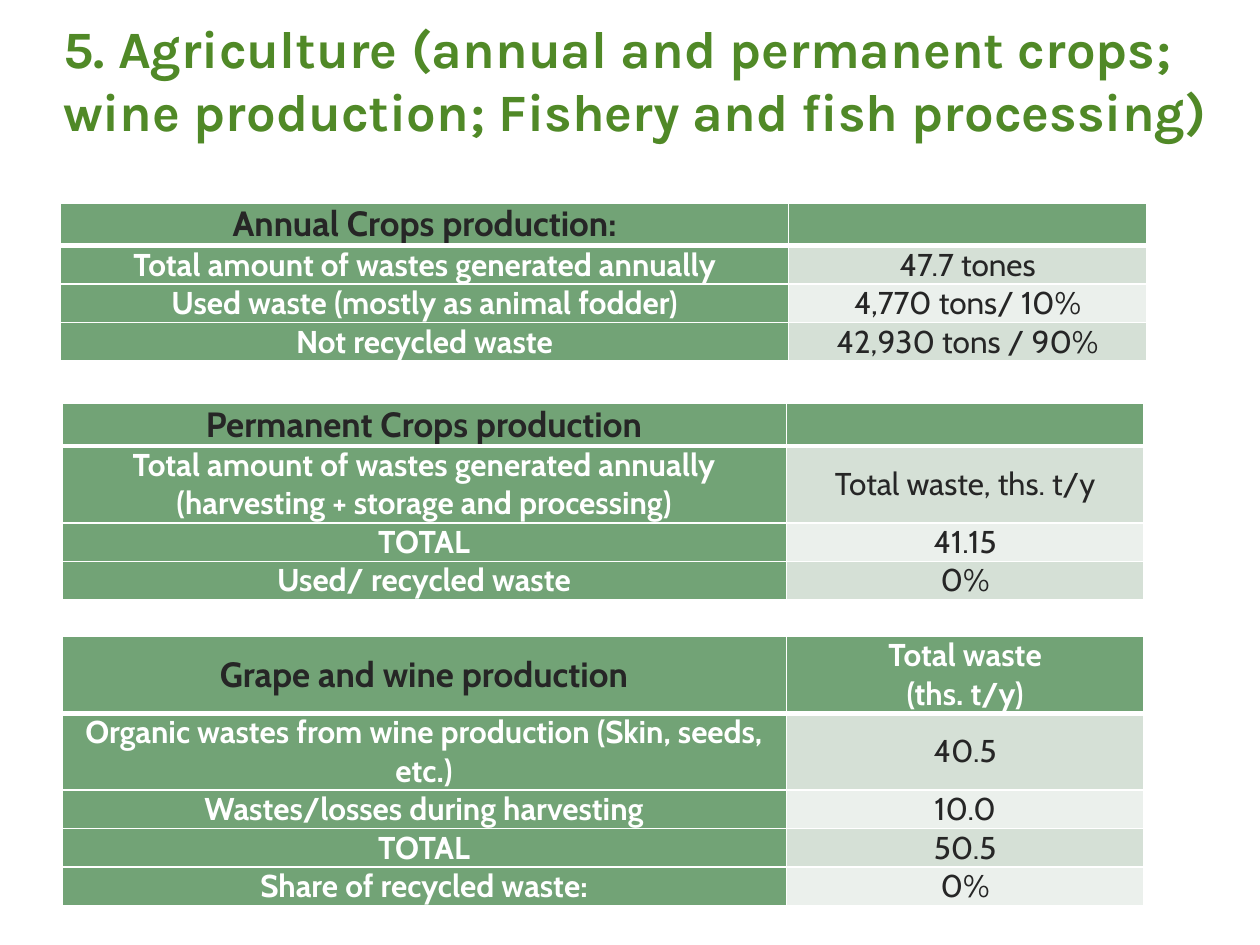
from dataclasses import dataclass

from lxml.etree import SubElement
from pptx import Presentation
from pptx.dml.color import RGBColor as RGB
from pptx.enum.text import MSO_ANCHOR as ANCHOR, MSO_AUTO_SIZE as AUTO, PP_ALIGN as ALIGN
from pptx.oxml.ns import qn
from pptx.util import Inches, Pt


@dataclass(frozen=True)
class Theme:
    title_font: str = "Karla"
    body_font: str = "Cabin"
    title_size: int = 30
    heading_size: int = 20
    body_size: int = 18
    title_color: str = "508927"
    dark: str = "262626"
    light: str = "FFFFFF"
    label_fill: str = "72A376"
    value_fills: tuple = ("D5E0D6", "EBF0EC")
    value_width: float = 2.84
    heading_height: float = 0.33
    line_height: float = 0.3


class SlideBuilder:
    def __init__(self, slide, theme):
        self.slide = slide
        self.theme = theme

    def style(self, paragraph, font_name, size, color, bold, align):
        paragraph.alignment = align
        font = paragraph.font
        font.name, font.size, font.bold = font_name, Pt(size), bold
        font.color.rgb = RGB.from_string(color)

    def title(self, wording):
        theme = self.theme
        title = self.slide.shapes.title
        title.left, title.top = Inches(0), Inches(0)
        title.width, title.height = Inches(10), Inches(0.92)
        frame = title.text_frame
        frame.word_wrap, frame.auto_size = True, AUTO.NONE
        frame.vertical_anchor = ANCHOR.TOP
        frame.margin_left, frame.margin_right = Inches(0.5), Inches(0.1)
        frame.margin_top, frame.margin_bottom = Inches(0.13), Inches(0.05)
        frame.text = wording
        self.style(frame.paragraphs[0], theme.title_font, theme.title_size,
                   theme.title_color, True, ALIGN.LEFT)

    def borders(self, cell, bottom):
        properties = cell._tc.get_or_add_tcPr()
        sides = (("a:lnL", 1), ("a:lnR", 1), ("a:lnT", 1), ("a:lnB", bottom))
        for position, (side, width) in enumerate(sides):
            line = SubElement(properties, qn(side), w=str(Pt(width)))
            fill = SubElement(line, qn("a:solidFill"))
            SubElement(fill, qn("a:srgbClr"), val=self.theme.light)
            # Border lines come before the cell fill
            properties.insert(position, line)

    def cell(self, cell, wording, fill, size, color, bold, bottom):
        cell.margin_left = cell.margin_right = Inches(0.07)
        cell.margin_top = cell.margin_bottom = 0
        cell.vertical_anchor = ANCHOR.MIDDLE
        cell.fill.solid()
        cell.fill.fore_color.rgb = RGB.from_string(fill)
        self.borders(cell, bottom)
        cell.text_frame.text = wording
        for paragraph in cell.text_frame.paragraphs:
            self.style(paragraph, self.theme.body_font, size, color, bold, ALIGN.CENTER)

    def waste_table(self, left, top, label_width, rows):
        """Each row holds a label, a value and its number of text lines."""
        theme = self.theme
        heights = [theme.line_height * lines for _, _, lines in rows]
        heights[0] = max(heights[0], theme.heading_height)
        table = self.slide.shapes.add_table(
            len(rows), 2, Inches(left), Inches(top),
            Inches(label_width + theme.value_width), Inches(sum(heights))).table
        table.first_row = table.horz_banding = False
        table.columns[0].width = Inches(label_width)
        table.columns[1].width = Inches(theme.value_width)

        for index, (label, value, _) in enumerate(rows):
            table.rows[index].height = Inches(heights[index])
            heading = index == 0
            bottom = 3 if heading else 1
            self.cell(table.cell(index, 0), label, theme.label_fill,
                      theme.heading_size if heading else theme.body_size,
                      theme.dark if heading else theme.light, True, bottom)
            self.cell(table.cell(index, 1), value,
                      theme.label_fill if heading else theme.value_fills[(index - 1) % 2],
                      theme.body_size, theme.light if heading else theme.dark,
                      heading, bottom)


ANNUAL_CROPS = [
    ("Annual Crops production:", "", 1),
    ("Total amount of wastes generated annually", "47.7 tones", 1),
    ("Used waste (mostly as animal fodder)", "4,770 tons/ 10%", 1),
    ("Not recycled waste", "42,930 tons / 90%", 1),
]
PERMANENT_CROPS = [
    ("Permanent Crops production", "", 1),
    ("Total amount of wastes generated annually (harvesting + storage and processing)",
     "Total waste, ths. t/y", 2),
    ("TOTAL", "41.15", 1),
    ("Used/ recycled waste", "0%", 1),
]
GRAPE_AND_WINE = [
    ("Grape and wine production", "Total waste\n(ths. t/y)", 2),
    ("Organic wastes from wine production (Skin, seeds, etc.)", "40.5", 2),
    ("Wastes/losses during harvesting", "10.0", 1),
    ("TOTAL", "50.5", 1),
    ("Share of recycled waste:", "0%", 1),
]


def main():
    deck = Presentation()
    deck.slide_width, deck.slide_height = Inches(10), Inches(7.5)
    title_only = deck.slide_layouts[5]
    builder = SlideBuilder(deck.slides.add_slide(title_only), Theme())

    # Heading
    builder.title("5. Agriculture (annual and permanent crops; "
                  "wine production; Fishery and fish processing)")

    # Waste by branch
    builder.waste_table(0.48, 1.61, 5.78, ANNUAL_CROPS)
    builder.waste_table(0.49, 3.2, 5.75, PERMANENT_CROPS)
    builder.waste_table(0.49, 5.05, 5.75, GRAPE_AND_WINE)

    deck.save("out.pptx")


if __name__ == "__main__":
    main()
